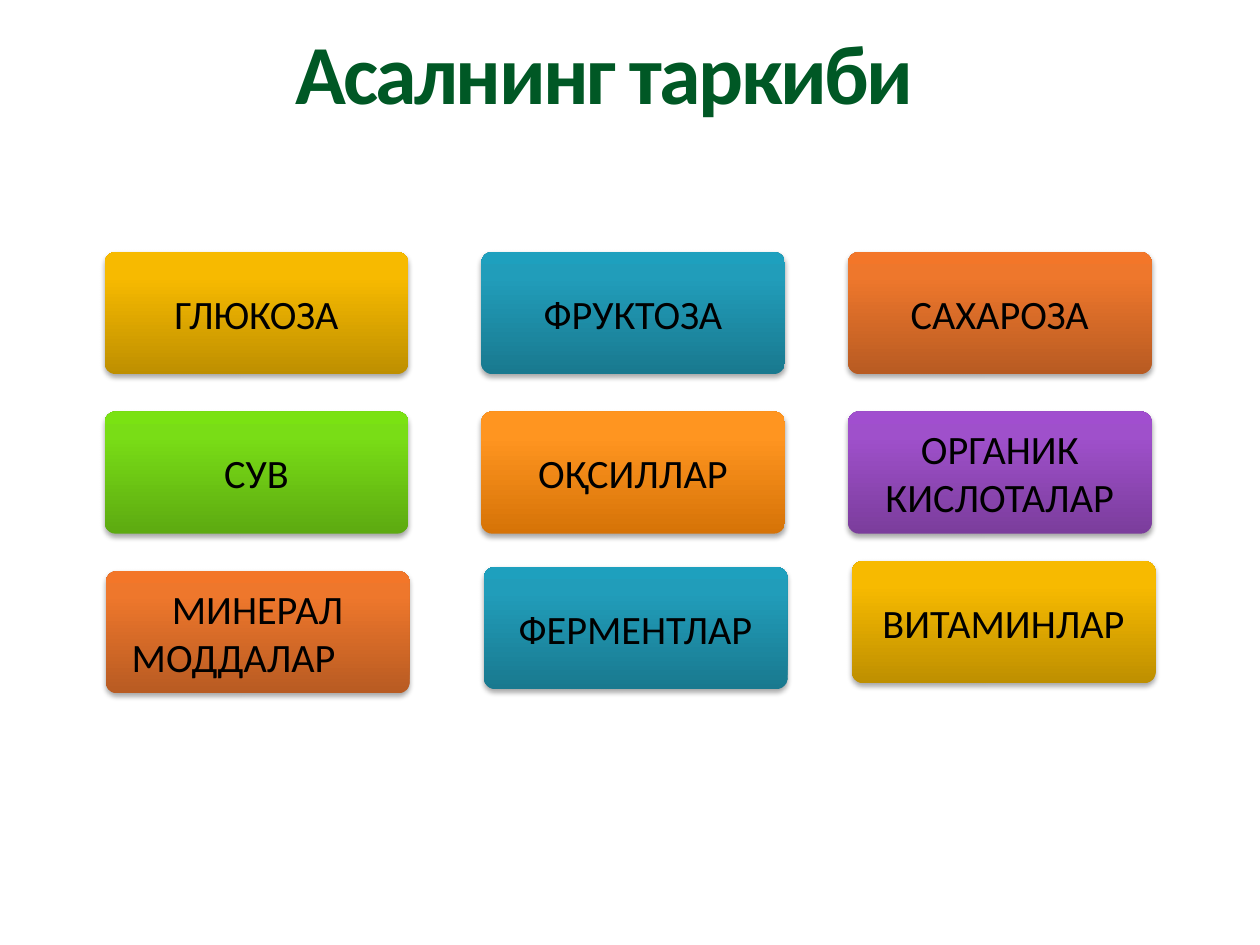
import pptx
import pptx.util
import pptx.dml.color
import pptx.enum.shapes
import pptx.enum.text
import pptx.oxml
import pptx.oxml.ns

Pt = pptx.util.Pt
RGBColor = pptx.dml.color.RGBColor
ALIGN = pptx.enum.text.PP_ALIGN
ANCHOR = pptx.enum.text.MSO_ANCHOR

GREEN_TITLE = RGBColor(0x00, 0x58, 0x25)
BLACK = RGBColor(0x00, 0x00, 0x00)
GOLD = (RGBColor(0xBE, 0x8F, 0x00), RGBColor(0xF7, 0xBA, 0x00), RGBColor(0xF8, 0xBB, 0x00))
TEAL = (RGBColor(0x19, 0x79, 0x8F), RGBColor(0x21, 0x9D, 0xBA), RGBColor(0x1E, 0xA0, 0xBE))
RUST = (RGBColor(0xB8, 0x5B, 0x22), RGBColor(0xEE, 0x77, 0x2C), RGBColor(0xF3, 0x76, 0x29))
LIME = (RGBColor(0x5D, 0xAA, 0x11), RGBColor(0x79, 0xDD, 0x16), RGBColor(0x7A, 0xE2, 0x12))
ORANGE = (RGBColor(0xD6, 0x73, 0x07), RGBColor(0xFF, 0x95, 0x20), RGBColor(0xFF, 0x95, 0x21))
PURPLE = (RGBColor(0x7B, 0x3D, 0x9C), RGBColor(0x9F, 0x50, 0xCB), RGBColor(0xA1, 0x4E, 0xCF))

TITLE = "Асалнинг таркиби"
INGREDIENTS = [
    [("ГЛЮКОЗА", GOLD), ("ФРУКТОЗА", TEAL), ("САХАРОЗА", RUST)],
    [("СУВ", LIME), ("ОҚСИЛЛАР", ORANGE), ("ОРГАНИК КИСЛОТАЛАР", PURPLE)],
    [("МИНЕРАЛ МОДДАЛАР\t", RUST), ("ФЕРМЕНТЛАР", TEAL), ("ВИТАМИНЛАР", GOLD)],
]
COLUMN_LEFTS = [59.8, 275, 484.6]
FIRST_TOP, ROW_STEP = 144, 91.2
CARD_WIDTH, CARD_HEIGHT = 173.5, 69.8
LAST_ROW_SHIFTS = [(0.7, 0), (1.5, -2.4), (2.2, -5.8)]
GRADIENT_POSITIONS = [0, 80, 100]

TITLE_FONT = {"name": "Calibri", "size": Pt(48), "bold": True}
CARD_FONT = {"name": "Calibri", "size": Pt(23)}
TITLE_FRAME = {
    "margin_left": Pt(139), "margin_top": 0, "margin_right": 0, "margin_bottom": 0,
    "vertical_anchor": ANCHOR.TOP, "word_wrap": True,
    "auto_size": pptx.enum.text.MSO_AUTO_SIZE.NONE,
}
CARD_FRAME = {
    "margin_left": Pt(7.2), "margin_top": Pt(3.6), "margin_right": Pt(7.2),
    "margin_bottom": Pt(3.6), "vertical_anchor": ANCHOR.MIDDLE, "word_wrap": True,
}


def apply_format(target, values):
    for name, value in values.items():
        setattr(target, name, value)


def write_text(box, text, frame_format, font_format, color, alignment):
    apply_format(box.text_frame, frame_format)
    paragraph = box.text_frame.paragraphs[0]
    paragraph.alignment = alignment
    span = paragraph.add_run()
    span.text = text
    apply_format(span.font, font_format)
    span.font.color.rgb = color
    return paragraph, span


def add_effects(card, colors):
    namespace = pptx.oxml.ns.nsdecls("a")
    stops = "".join(
        f'<a:gs pos="{position * 1000}"><a:srgbClr val="{color}"/></a:gs>'
        for position, color in zip(GRADIENT_POSITIONS, colors)
    )
    properties = card._element.spPr
    properties.append(pptx.oxml.parse_xml(
        f'<a:gradFill {namespace} rotWithShape="1"><a:gsLst>{stops}</a:gsLst>'
        '<a:lin ang="16200000" scaled="0"/></a:gradFill>'
    ))
    card.line.fill.background()
    properties.append(pptx.oxml.parse_xml(
        f'<a:effectLst {namespace}><a:outerShdw blurRad="{Pt(3.1)}" dist="{Pt(1.8)}" '
        f'dir="5400000" rotWithShape="0"><a:srgbClr val="{BLACK}">'
        '<a:alpha val="35000"/></a:srgbClr></a:outerShdw></a:effectLst>'
    ))


def add_card(page, left, top, text, colors):
    card = page.shapes.add_shape(
        pptx.enum.shapes.MSO_SHAPE.ROUNDED_RECTANGLE,
        Pt(left), Pt(top), Pt(CARD_WIDTH), Pt(CARD_HEIGHT),
    )
    card.adjustments[0] = 0.09
    add_effects(card, colors)
    write_text(card, text, CARD_FRAME, CARD_FONT, BLACK, ALIGN.CENTER)


def main():
    deck = pptx.Presentation()
    deck.slide_width, deck.slide_height = Pt(720), Pt(540)
    page = deck.slides.add_slide(deck.slide_layouts[5])

    title = page.shapes.title
    apply_format(title, {"left": Pt(30), "top": Pt(18), "width": Pt(660), "height": Pt(52.7)})
    paragraph, span = write_text(title, TITLE, TITLE_FRAME, TITLE_FONT, GREEN_TITLE, ALIGN.LEFT)
    paragraph.line_spacing = 0.9
    span.font._element.set("spc", "-150")

    for row, cards in enumerate(INGREDIENTS):
        for column, (text, colors) in enumerate(cards):
            is_last = row == len(INGREDIENTS) - 1
            shift_x, shift_y = LAST_ROW_SHIFTS[column] if is_last else (0, 0)
            left = COLUMN_LEFTS[column] + shift_x
            top = FIRST_TOP + row * ROW_STEP + shift_y
            add_card(page, left, top, text, colors)

    deck.save("out.pptx")


if __name__ == "__main__":
    main()
